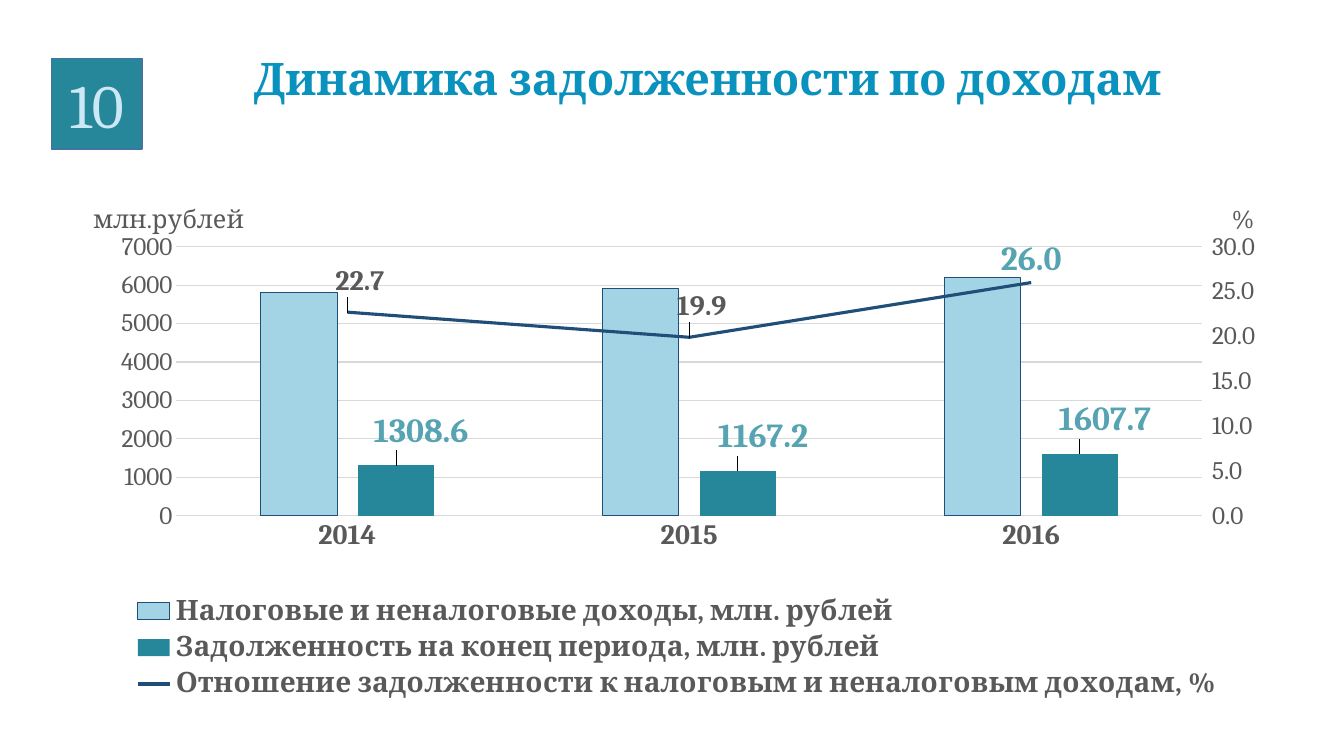
import copy
import pptx
import pptx.chart.data
import pptx.dml.color
import pptx.enum.chart
import pptx.enum.shapes
import pptx.enum.text
import pptx.oxml
import pptx.oxml.ns
import pptx.util

# Content
TITLE = "Динамика задолженности по доходам "
NUMBER = "10"
YEARS = ["2014", "2015", "2016"]
INCOME = ("Налоговые и неналоговые доходы, млн. рублей", [5800, 5900, 6200], "General")
DEBT = ("Задолженность на конец периода, млн. рублей", [1308.6, 1167.2, 1607.7], "General")
RATIO = ("Отношение задолженности к налоговым и неналоговым доходам, %",
         [22.7, 19.9, 26.0], "0.0")
UNITS = ("млн.рублей", "%")

# Theme
THEME = {
    "face": "Cambria", "title": "0892BD", "badge": "26879A", "edge": "43739E",
    "pale": "CBE8F4", "text": "595959", "grid": "D9D9D9", "income": "A3D4E5",
    "debt": "26879A", "ratio": "1F4E79", "label": "56A3B2",
    "huge": 44, "head": 32, "big": 24, "mid": 20, "small": 18, "base": 16,
}

# Grid of tenths of an inch: left, top, width, height
CELL = 0.1
SLIDE = (133.33, 75)
BADGE = (5.1, 5.8, 9, 9)
HEAD = (17.3, 4.5, 106.8, 6.4)
CHART = (5.1, 17, 124.1, 53.4)

# Shares of the chart, and label shifts for each year
PLOT = (0.1, 0.14, 0.82, 0.5)
LEGEND = (0.06, 0.78, 0.88, 0.21)
SPOTS = ((0.03, 0.05), (0.94, 0.05))
DEBT_SHIFT = ((0.02, -0.02), (0.02, -0.02), (0.02, -0.02))
RATIO_SHIFT = ((0.01, -0.02), (0.01, -0.02), (0, 0))

C = pptx.enum.chart
E = pptx.enum.text


def rgb(name):
    return pptx.dml.color.RGBColor.from_string(THEME[name])


def span(cells):
    return [pptx.util.Inches(n * CELL) for n in cells]


def put(item, **vals):
    for key, val in vals.items():
        setattr(item, key, val)


def style(font, size, color="text", bold=False):
    put(font, name=THEME["face"], size=pptx.util.Pt(THEME[size]), bold=bold)
    font.color.rgb = rgb(color)


def paint(item, fill):
    item.fill.solid()
    item.fill.fore_color.rgb = rgb(fill)


def stroke(line, color, width):
    line.color.rgb = rgb(color)
    line.width = pptx.util.Pt(width)


def node(text):
    space = pptx.oxml.ns.nsdecls("c")
    return pptx.oxml.parse_xml(text.replace(">", f" {space}>", 1))


def layout(host, index, box, inner=False, edge=True):
    """Fix a chart part at the given shares of the chart."""
    for old in host.xpath("./c:layout"):
        host.remove(old)
    body = '<c:layoutTarget val="inner"/>' if inner else ""
    if edge:
        body += '<c:xMode val="edge"/><c:yMode val="edge"/>'
    body += "".join(f'<c:{k} val="{v}"/>' for k, v in zip("xywh", box))
    host.insert(index, node(f"<c:layout><c:manualLayout>{body}</c:manualLayout></c:layout>"))


def write(frame, text, size, color, bold=False):
    put(frame, word_wrap=True, vertical_anchor=E.MSO_ANCHOR.MIDDLE)
    para = frame.paragraphs[0]
    para.alignment = E.PP_ALIGN.CENTER
    run = para.add_run()
    run.text = text
    style(run.font, size, color, bold)


def add_chart(slide):
    data = pptx.chart.data.CategoryChartData()
    data.categories = YEARS
    for name, vals, form in (INCOME, DEBT, RATIO):
        data.add_series(name, vals, form)
    kind = C.XL_CHART_TYPE.COLUMN_CLUSTERED
    chart = slide.shapes.add_chart(kind, *span(CHART), data).chart
    put(chart, has_title=False, has_legend=True)
    style(chart.font, "base")
    put(chart.plots[0], gap_width=219, overlap=-27, vary_by_categories=False)
    put(chart.legend, position=C.XL_LEGEND_POSITION.BOTTOM, include_in_layout=False)
    style(chart.legend.font, "mid", bold=True)
    return chart


def set_axes(chart):
    cat, val = chart.category_axis, chart.value_axis
    for axis, size, bold in ((cat, "mid", True), (val, "small", False)):
        axis.major_tick_mark = C.XL_TICK_MARK.NONE
        style(axis.tick_labels.font, size, bold=bold)
    stroke(cat.format.line, "grid", 0.75)
    put(val, minimum_scale=0, maximum_scale=7000, major_unit=1000,
        has_major_gridlines=True, has_title=True)
    val.format.line.fill.background()
    stroke(val.major_gridlines.format.line, "grid", 0.75)
    put(val.tick_labels, number_format="General", number_format_is_linked=False)
    write(val.axis_title.text_frame, UNITS[0], "small", "text")


def add_right(chart):
    """Move the ratio to a line on a second pair of axes."""
    area = chart.element.xpath(".//c:plotArea")[0]
    bars = area.xpath("./c:barChart")[0]
    ratio = bars.xpath("./c:ser")[-1]
    for flag in ratio.xpath("./c:invertIfNegative"):
        ratio.remove(flag)
    line = node('<c:lineChart><c:grouping val="standard"/><c:varyColors val="0"/>'
                '<c:marker val="1"/><c:axId val="701"/><c:axId val="702"/></c:lineChart>')
    line.insert(2, ratio)
    bars.addnext(line)

    cat, val = area.xpath("./c:catAx")[0], area.xpath("./c:valAx")[0]
    cat2, val2 = copy.deepcopy(cat), copy.deepcopy(val)
    val.addnext(val2)
    val2.addnext(cat2)
    val2.remove(val2.xpath("./c:majorGridlines")[0])
    changes = (
        (cat2, {"axId": "701", "crossAx": "702", "delete": "1"}),
        (val2, {"axId": "702", "crossAx": "701", "axPos": "r", "crosses": "max",
                "majorTickMark": "out", "majorUnit": "5"}),
    )
    for axis, vals in changes:
        for tag, value in vals.items():
            axis.xpath(f"./c:{tag}")[0].set("val", value)
    val2.xpath("./c:scaling/c:max")[0].set("val", "30")
    val2.xpath("./c:numFmt")[0].set("formatCode", "0.0")
    val2.xpath(".//a:t")[0].text = UNITS[1]

    # Places of the plot, legend and axis titles
    layout(area, 0, PLOT, inner=True)
    layout(chart.element.xpath(".//c:legend")[0], 1, LEGEND)
    for axis, spot in zip((val, val2), SPOTS):
        title = axis.xpath("./c:title")[0]
        layout(title, 1, spot)
        body = title.xpath(".//a:bodyPr")[0]
        body.set("rot", "0")
        body.set("vert", "horz")


def set_series(chart):
    income, debt = chart.plots[0].series
    ratio = chart.plots[1].series[0]
    paint(income.format, "income")
    stroke(income.format.line, "ratio", 0.75)
    paint(debt.format, "debt")
    stroke(ratio.format.line, "ratio", 2.25)
    ratio.smooth = False
    ratio.marker.style = C.XL_MARKER_STYLE.NONE

    # Value labels
    where = C.XL_LABEL_POSITION
    strong, plain = ("big", "label", True), ("mid", "text", True)
    rows = (
        (debt, where.OUTSIDE_END, (strong, strong, strong)),
        (ratio, where.ABOVE, (plain, plain, strong)),
    )
    for series, place, looks in rows:
        put(series.data_labels, show_value=True, position=place)
        for spot, look in enumerate(looks):
            label = series.points[spot].data_label
            style(label.font, *look)
            label.position = place
    for label, shift in zip(chart.element.xpath(".//c:dLbl"), DEBT_SHIFT + RATIO_SHIFT):
        layout(label, 1, shift, edge=False)


def main():
    deck = pptx.Presentation()
    deck.slide_width, deck.slide_height = span(SLIDE)
    slide = deck.slides.add_slide(deck.slide_layouts[5])

    # Title
    head = slide.shapes.title
    put(head, **dict(zip(("left", "top", "width", "height"), span(HEAD))))
    write(head.text_frame, TITLE, "head", "title", True)

    # Number badge
    badge = slide.shapes.add_shape(pptx.enum.shapes.MSO_SHAPE.RECTANGLE, *span(BADGE))
    badge.shadow.inherit = False
    paint(badge, "badge")
    stroke(badge.line, "edge", 1)
    write(badge.text_frame, NUMBER, "huge", "pale")

    # Chart
    chart = add_chart(slide)
    set_axes(chart)
    add_right(chart)
    set_series(chart)
    deck.save("out.pptx")


if __name__ == "__main__":
    main()
